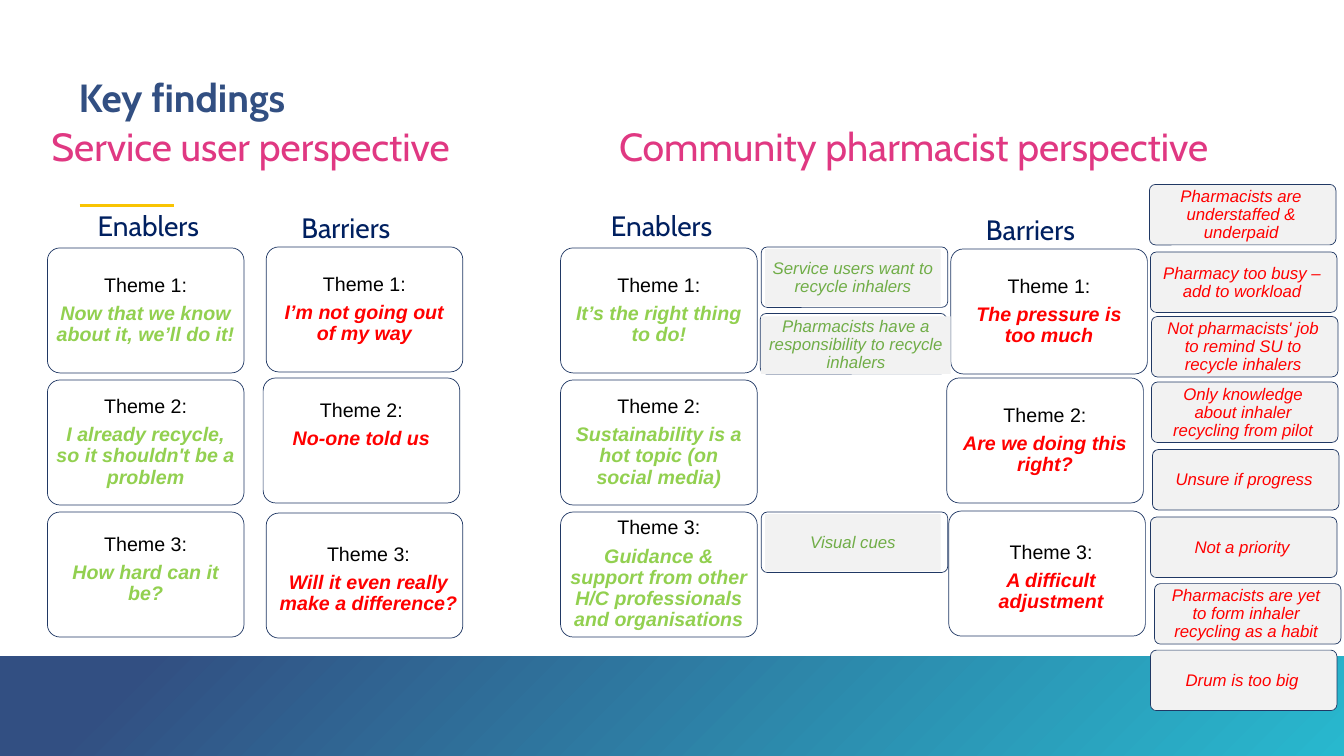
from lxml import etree
from pptx import Presentation
from pptx.dml.color import RGBColor
from pptx.enum import shapes, text
from pptx.oxml import ns
from pptx.util import Inches, Pt

WHITE = RGBColor(0xFF, 0xFF, 0xFF)
BLACK = RGBColor(0x00, 0x00, 0x00)
GREY = RGBColor(0xF2, 0xF2, 0xF2)
NAVY = RGBColor(0x20, 0x38, 0x64)
HEADING_BLUE = RGBColor(0x00, 0x20, 0x60)
TITLE_BLUE = RGBColor(0x32, 0x4F, 0x82)
TEAL = RGBColor(0x28, 0xB8, 0xCE)
PINK = RGBColor(0xE0, 0x38, 0x82)
YELLOW = RGBColor(0xF9, 0xC4, 0x02)
LIME = RGBColor(0x92, 0xD0, 0x50)
GREEN = RGBColor(0x70, 0xAD, 0x47)
RED = RGBColor(0xFF, 0x00, 0x00)

TITLES = [
    ("Key findings", 0.78, 0.78, 11.77, TITLE_BLUE, True),
    ("Service user perspective", 0.51, 1.27, 4.36, PINK, False),
    ("Community pharmacist perspective", 6.14, 1.27, 6.68, PINK, False),
]
HEADINGS = [
    ("Enablers", 0.87, 2.02),
    ("Barriers", 2.89, 2.04),
    ("Enablers", 5.96, 2.02),
    ("Barriers", 9.68, 2.06),
]
CARD_WIDTH, CARD_HEIGHT, CARD_EDGE = 1.95, 1.24, 0.04
THEME_COLUMNS = [
    (LIME, 0.05, [
        (0.47, 2.46, "Now that we know about it, we’ll do it!", 0, False),
        (0.47, 3.77, "I already recycle, so it shouldn't be a problem", 0, False),
        (0.47, 5.08, "How hard can it be?", 0.05, False),
    ]),
    (RED, 0.07, [
        (2.64, 2.45, "I’m not going out of my way", 0, False),
        (2.61, 3.75, "No-one told us", 0.15, False),
        (2.64, 5.09, "Will it even really make a difference?", 0, True),
    ]),
    (LIME, 0.05, [
        (5.56, 2.46, "It’s the right thing to do!", 0, False),
        (5.56, 3.77, "Sustainability is a hot topic (on social media)", 0, False),
        (5.56, 5.08, "Guidance & support from other H/C professionals and organisations", 0, False),
    ]),
    (RED, 0.07, [
        (9.43, 2.47, "The pressure is too much", 0, False),
        (9.39, 3.75, "Are we doing this right?", 0, False),
        (9.41, 5.07, "A difficult adjustment", 0, True),
    ]),
]
NOTE_WIDTH, NOTE_HEIGHT = 1.85, 0.6
LABEL_WIDTH, LABEL_HEIGHT = 1.74, 0.57
ENABLER_NOTES = [
    (7.55, 5.08, "Visual cues"),
    (7.55, 2.45, "Service users want to recycle inhalers"),
]
BARRIER_NOTES = [
    (11.41, 2.5, "Pharmacy too busy – add to workload"),
    (11.42, 3.14, "Not pharmacists' job to remind SU to recycle inhalers"),
    (11.4, 1.83, "Pharmacists are understaffed & underpaid"),
    (11.43, 4.46, "Unsure if progress"),
    (11.42, 3.79, "Only knowledge about inhaler recycling from pilot"),
    (11.41, 6.45, "Drum is too big"),
    (11.45, 5.79, "Pharmacists are yet to form inhaler recycling as a habit"),
    (11.41, 5.13, "Not a priority"),
]


def set_insets(frame, side, upright):
    """Wrap the text and set its side and its top and bottom insets."""
    frame.word_wrap = True
    frame.margin_left = frame.margin_right = Inches(side)
    frame.margin_top = frame.margin_bottom = Inches(upright)


def style_runs(paragraph, size, color, font="Arial", bold=False, italic=False):
    """Format every run of a paragraph."""
    for run in paragraph.runs:
        run.font.name = font
        run.font.size = Pt(size)
        run.font.bold = bold
        run.font.italic = italic
        run.font.color.rgb = color


def center(paragraph):
    """Centre a paragraph with tight lines and a small gap after it."""
    paragraph.alignment = text.PP_ALIGN.CENTER
    paragraph.line_spacing = 0.9
    paragraph.space_after = Pt(5)


def add_band(slide):
    """Add the gradient band at the foot and the yellow rule."""
    band = slide.shapes.add_shape(
        shapes.MSO_SHAPE.RECTANGLE, 0, Inches(6.51), Inches(13.33), Inches(0.99))
    band.shadow.inherit = False
    band.line.fill.background()
    band.fill.gradient()
    band.fill.gradient_angle = 315
    for stop, color, position in zip(band.fill.gradient_stops, (TITLE_BLUE, TEAL), (0.1, 1)):
        stop.color.rgb = color
        stop.position = position
    rule = slide.shapes.add_connector(
        shapes.MSO_CONNECTOR.STRAIGHT, Inches(0.79), Inches(2.04), Inches(1.73), Inches(2.04))
    rule.line.color.rgb = YELLOW
    rule.line.width = Pt(2.25)
    etree.SubElement(rule._element.spPr, ns.qn("a:effectLst"))


def add_heading(slide, words, left, top, width, height, inset, size, color, bold=False):
    """Add one line of heading text."""
    box = slide.shapes.add_textbox(Inches(left), Inches(top), Inches(width), Inches(height))
    set_insets(box.text_frame, inset, inset / 2)
    box.text_frame.text = words
    paragraph = box.text_frame.paragraphs[0]
    paragraph.line_spacing = 0.9 if inset == 0 else 1.0
    style_runs(paragraph, size, color, "Cabin", bold)


def add_card(slide, left, top, width, height, fill):
    """Add a rounded outline card; white ones are slightly transparent."""
    card = slide.shapes.add_shape(
        shapes.MSO_SHAPE.ROUNDED_RECTANGLE,
        Inches(left), Inches(top), Inches(width), Inches(height))
    card.adjustments[0] = 0.1
    card.shadow.inherit = False
    card.fill.solid()
    card.fill.fore_color.rgb = fill
    card.line.color.rgb = NAVY
    card.line.width = Pt(0.5)
    if fill == WHITE:
        color = card._element.spPr.find(ns.qn("a:solidFill"))[0]
        etree.SubElement(color, ns.qn("a:alpha"), val="90000")


def add_theme(slide, number, theme, color, inset):
    """Add a theme card with its number and phrase."""
    left, top, phrase, lift, full_size = theme
    add_card(slide, left, top, CARD_WIDTH, CARD_HEIGHT, WHITE)
    trim = 0 if full_size else 2 * CARD_EDGE
    box = slide.shapes.add_textbox(
        Inches(left + CARD_EDGE), Inches(top + CARD_EDGE - lift),
        Inches(CARD_WIDTH - trim), Inches(CARD_HEIGHT - trim))
    frame = box.text_frame
    set_insets(frame, inset, inset)
    frame.vertical_anchor = text.MSO_ANCHOR.MIDDLE
    frame.text = f"Theme {number}:\n{phrase}"
    label, quote = frame.paragraphs
    center(label)
    center(quote)
    style_runs(label, 14, BLACK)
    style_runs(quote, 14, color, bold=True, italic=True)


def add_label(slide, left, top, width, words, color):
    """Add a grey block of small italic text."""
    label = slide.shapes.add_shape(
        shapes.MSO_SHAPE.RECTANGLE,
        Inches(left), Inches(top), Inches(width), Inches(LABEL_HEIGHT))
    label.shadow.inherit = False
    label.fill.solid()
    label.fill.fore_color.rgb = GREY
    label.line.fill.background()
    frame = label.text_frame
    set_insets(frame, 0.06, 0.06)
    frame.vertical_anchor = text.MSO_ANCHOR.MIDDLE
    frame.text = words
    center(frame.paragraphs[0])
    style_runs(frame.paragraphs[0], 12, color, italic=True)


def add_note(slide, left, top, words, color, fill):
    """Add a small card with a grey label on it."""
    add_card(slide, left, top, NOTE_WIDTH, NOTE_HEIGHT, fill)
    add_label(slide, left + 0.04, top + 0.02, LABEL_WIDTH, words, color)


def main():
    """Build the slide and save it."""
    presentation = Presentation()
    presentation.slide_width = Inches(13.33)
    presentation.slide_height = Inches(7.5)
    slide = presentation.slides.add_slide(presentation.slide_layouts[6])
    add_band(slide)
    add_card(slide, 7.54, 3.11, NOTE_WIDTH, NOTE_HEIGHT, WHITE)
    for words, left, top, width, color, bold in TITLES:
        add_heading(slide, words, left, top, width, 0.43, 0, 28, color, bold)
    for words, left, top in HEADINGS:
        add_heading(slide, words, left, top, 1.37, 0.44, 0.1, 20, HEADING_BLUE)
    for color, inset, themes in THEME_COLUMNS:
        for number, theme in enumerate(themes, start=1):
            add_theme(slide, number, theme, color, inset)
    add_label(slide, 7.55, 3.14, 1.88,
              "Pharmacists have a responsibility to recycle inhalers", GREEN)
    for left, top, words in ENABLER_NOTES:
        add_note(slide, left, top, words, GREEN, WHITE)
    for left, top, words in BARRIER_NOTES:
        add_note(slide, left, top, words, RED, GREY)
    presentation.save("out.pptx")


if __name__ == "__main__":
    main()
